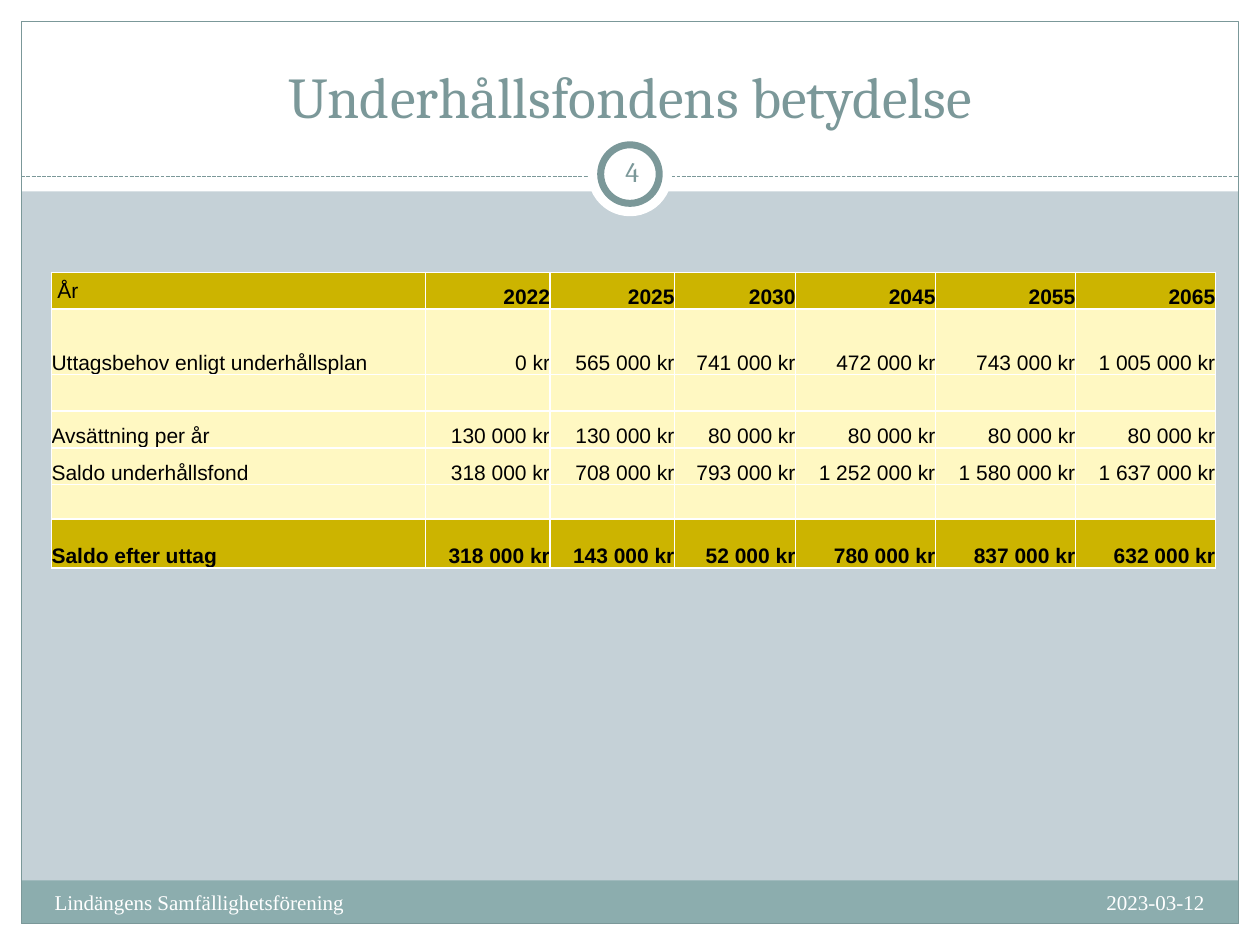
from dataclasses import dataclass

from lxml import etree
from pptx import Presentation
from pptx.dml.color import RGBColor
from pptx.enum import dml, shapes, text
from pptx.oxml import ns
from pptx.util import Cm, Pt


@dataclass(frozen=True)
class Theme:
    white: str = "FFFFFF"
    black: str = "000000"
    back: str = "C5D1D7"
    teal: str = "7B9899"
    bar: str = "8CADAE"
    gold: str = "CCB400"
    cream: str = "FFF8C2"
    serif: str = "Cambria"
    sans: str = "Arial"
    roman: str = "Times New Roman"
    head: int = 33
    page: int = 16
    body: int = 12


T = Theme()
HARD = chr(160)
LEFT, MID, RIGHT = text.PP_ALIGN.LEFT, text.PP_ALIGN.CENTER, text.PP_ALIGN.RIGHT
TOP, CORE, BASE = text.MSO_ANCHOR.TOP, text.MSO_ANCHOR.MIDDLE, text.MSO_ANCHOR.BOTTOM
RECT, OVAL = shapes.MSO_SHAPE.RECTANGLE, shapes.MSO_SHAPE.OVAL
SUMS = [
    ("Uttagsbehov enligt underhållsplan", (0, 565, 741, 472, 743, 1005)),
    None,
    ("Avsättning per år", (130, 130, 80, 80, 80, 80)),
    ("Saldo underhållsfond", (318, 708, 793, 1252, 1580, 1637)),
    None,
    ("Saldo efter uttag", (318, 143, 52, 780, 837, 632)),
]
YEARS = (2022, 2025, 2030, 2045, 2055, 2065)
COLS = (7.54, 2.51, 2.51, 2.44, 2.82, 2.82, 2.82)
ROWS = (0.74, 1.32, 0.74, 0.74, 0.74, 0.69, 0.99)


def color(code):
    return RGBColor.from_string(code)


def shape(slide, kind, box, fill=None, line=None, width=0.75):
    item = slide.shapes.add_shape(kind, *map(Cm, box))
    item.shadow.inherit = False
    if fill:
        item.fill.solid()
        item.fill.fore_color.rgb = color(fill)
    else:
        item.fill.background()
    if line:
        item.line.color.rgb = color(line)
        item.line.width = Pt(width)
    else:
        item.line.fill.background()


def write(para, words, font, size, ink, align, bold=False):
    para.alignment = align
    run = para.add_run()
    run.text = words
    run.font.name = font
    run.font.size = Pt(size)
    run.font.bold = bold
    run.font.color.rgb = color(ink)


def label(slide, box, words, font, size, ink, align, anchor=TOP, wrap=True):
    frame = slide.shapes.add_textbox(*map(Cm, box)).text_frame
    frame.word_wrap = wrap
    frame.vertical_anchor = anchor
    frame.margin_left = frame.margin_right = Cm(0.13)
    frame.margin_top = frame.margin_bottom = Cm(0.13)
    write(frame.paragraphs[0], words, font, size, ink, align)


def border(slide, box, edge):
    x, y, w, h = box
    for side in (
        (x, y + h - edge, w, edge),
        (x, y, w, 3.86),
        (x, y, edge, h),
        (x + w - edge, y, edge, h),
    ):
        shape(slide, RECT, side, T.white)
    shape(slide, RECT, (x + edge, y + 17.75, w - 2 * edge, 0.87), T.bar)
    shape(slide, RECT, (x + edge, y + edge, w - 2 * edge, h - 2 * edge), line=T.teal)


def header(slide, box):
    x, y, w, h = box
    rule = slide.shapes.add_connector(
        shapes.MSO_CONNECTOR.STRAIGHT, Cm(x), Cm(y + h), Cm(x + w), Cm(y + h)
    )
    rule.line.color.rgb = color(T.teal)
    rule.line.width = Pt(0.75)
    rule.line.dash_style = dml.MSO_LINE.SQUARE_DOT
    etree.SubElement(rule._element.spPr, ns.qn("a:effectLst"))
    label(slide, (x + 0.41, y + 0.21, w - 0.82, 2.11), "Underhållsfondens betydelse",
          T.serif, T.head, T.teal, MID, BASE)


def badge(slide, box):
    x, y, w, h = box
    gap = 0.26
    shape(slide, OVAL, box, T.white)
    shape(slide, OVAL, (x + gap, y + gap, w - 2 * gap, h - 2 * gap), T.white, T.teal, 4)
    label(slide, (x + 0.59, y + 0.33, 0.61, 0.91), "4",
          T.serif, T.page, T.teal, MID, CORE, False)


def footer(slide, box):
    x, y, w, h = box
    label(slide, (x, y, 9.7, h), "Lindängens Samfällighetsförening",
          T.roman, T.body, T.white, LEFT)
    label(slide, (x + w - 8.2, y, 8.2, h), "2023-03-12",
          T.roman, T.body, T.white, RIGHT)


def edges(cell):
    props = cell._tc.get_or_add_tcPr()
    for spot, side in enumerate(("lnL", "lnR", "lnT", "lnB")):
        line = etree.Element(ns.qn("a:" + side), w=str(Pt(1)))
        fill = etree.SubElement(line, ns.qn("a:solidFill"))
        etree.SubElement(fill, ns.qn("a:srgbClr"), val=T.white)
        props.insert(spot, line)


def money(sum):
    amount = f"{sum * 1000:,} kr"
    return amount.replace(",", HARD).replace(" ", HARD)


def grid():
    rows = [[HARD + "År", *map(str, YEARS)]]
    for entry in SUMS:
        if entry:
            name, sums = entry
            rows.append([name, *map(money, sums)])
        else:
            rows.append([""] * len(COLS))
    return rows


def budget(slide, box):
    table = slide.shapes.add_table(len(ROWS), len(COLS), *map(Cm, box)).table
    table.first_row = table.horz_banding = False
    for col, width in zip(table.columns, COLS):
        col.width = Cm(width)
    for row, height in zip(table.rows, ROWS):
        row.height = Cm(height)
    for r, row in enumerate(grid()):
        strong = r in (0, len(ROWS) - 1)
        for c, words in enumerate(row):
            cell = table.cell(r, c)
            corner = r == c == 0
            cell.fill.solid()
            cell.fill.fore_color.rgb = color(T.gold if strong else T.cream)
            cell.margin_left = cell.margin_right = 0
            cell.margin_top = cell.margin_bottom = 0
            cell.vertical_anchor = CORE if corner else BASE
            edges(cell)
            para = cell.text_frame.paragraphs[0]
            if words:
                write(para, words, T.sans, T.body, T.black,
                      RIGHT if c else LEFT, strong and not corner)
            else:
                etree.SubElement(para._p, ns.qn("a:endParaRPr"), sz=str(T.body * 100))


def main():
    deck = Presentation()
    deck.slide_width, deck.slide_height = Cm(25.4), Cm(19.05)
    slide = deck.slides.add_slide(deck.slide_layouts[6])
    slide.background.fill.solid()
    slide.background.fill.fore_color.rgb = color(T.back)
    border(slide, (0, 0, 25.4, 19.05), 0.43)
    header(slide, (0.43, 0.43, 24.54, 3.13))
    badge(slide, (11.85, 2.66, 1.7, 1.7))
    footer(slide, (0.97, 17.81, 23.44, 0.76))
    budget(slide, (1.04, 5.49, sum(COLS), sum(ROWS)))
    deck.save("out.pptx")


if __name__ == "__main__":
    main()
